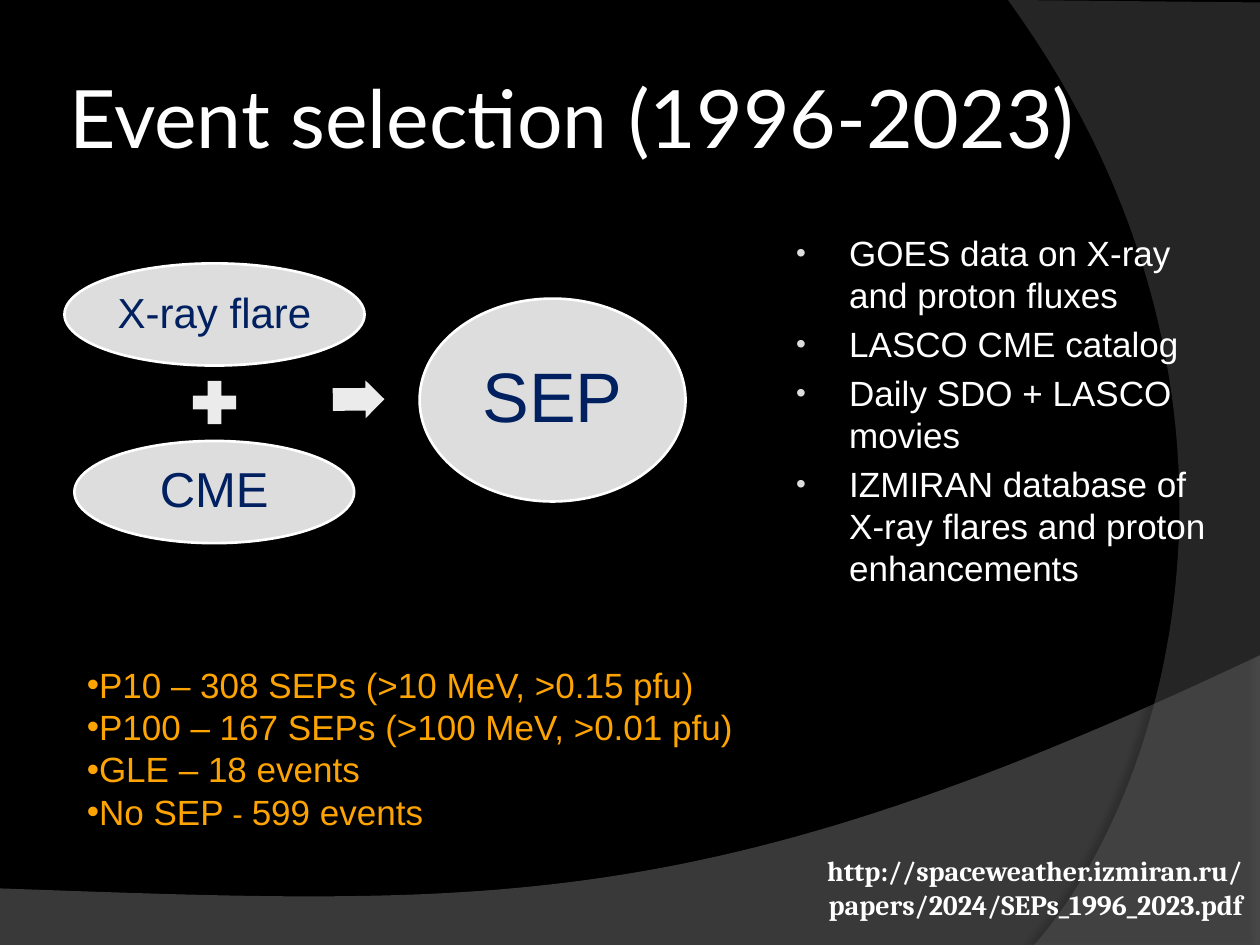
"""Build the event selection slide."""
from lxml.etree import SubElement
from pptx import Presentation
from pptx.dml.color import RGBColor as RGB
from pptx.enum.shapes import MSO_SHAPE as SHAPE
from pptx.enum.text import MSO_ANCHOR as ANCHOR, PP_ALIGN as ALIGN
from pptx.oxml.ns import qn
from pptx.util import Cm, Pt

COLORS = {"black": "000000", "white": "FFFFFF", "wave": "7F7F7F", "arc": "5E5E5E",
          "oval": "DDDDDD", "sign": "EBEBEB", "navy": "002060", "orange": "FDA403"}


def add_run(p, text, size, color, font="Arial", bold=False):
    r = p.add_run()
    r.text = text
    r.font.size, r.font.name, r.font.bold = Pt(size), font, bold
    r.font.color.rgb = RGB.from_string(COLORS[color])


def add_bullet(p, left=0, hanging=0, color=None, percent=100):
    pPr = p._p.get_or_add_pPr()
    pPr.set("marL", str(Cm(left)))
    pPr.set("indent", str(-Cm(hanging)))
    if color:
        clr = SubElement(pPr, qn("a:buClr"))
        SubElement(clr, qn("a:srgbClr"), val=COLORS[color])
    SubElement(pPr, qn("a:buSzPct"), val=str(percent * 1000))
    SubElement(pPr, qn("a:buFont"), typeface="Arial")
    SubElement(pPr, qn("a:buChar"), char="•")


prs = Presentation()
prs.slide_width, prs.slide_height = Cm(25.4), Cm(19.05)
s = prs.slides.add_slide(prs.slide_layouts[6])
s.background.fill.solid()
s.background.fill.fore_color.rgb = RGB.from_string(COLORS["black"])

swooshes = [
    ("wave", 45, [(0, 17.91), (0, 19.05), (25.4, 19.05)],
     [(25.4, 13.21), (14.2, 18.52), (9.93, 18.26), (0, 17.91)], (35, 3.5, 270)),
    ("arc", 40, [(25.4, 0.05), (25.4, 19.05)],
     [(20.85, 19.05), (23.75, 15.72), (25.86, 7.62), (20.32, 0)], (45, 4, 180)),
]
for color, alpha, corners, curve, (shade, dist, angle) in swooshes:
    points = list(corners)
    for step in range(61):
        t = step / 60
        weights = ((1 - t) ** 3, 3 * t * (1 - t) ** 2, 3 * t * t * (1 - t), t ** 3)
        points.append([sum(w * c[axis] for w, c in zip(weights, curve)) for axis in (0, 1)])
    points = [(Cm(x), Cm(y)) for x, y in points]
    fb = s.shapes.build_freeform(*points[0])
    fb.add_line_segments(points[1:])
    sp = fb.convert_to_shape()
    sp.fill.solid()
    sp.fill.fore_color.rgb = RGB.from_string(COLORS[color])
    sp.line.fill.background()
    fill_clr = sp._element.spPr.find(qn("a:solidFill"))[0]
    SubElement(fill_clr, qn("a:alpha"), val=str(alpha * 1000))
    effects = SubElement(sp._element.spPr, qn("a:effectLst"))
    shadow = SubElement(effects, qn("a:outerShdw"), blurRad=str(Pt(4)), dist=str(Pt(dist)),
                        dir=str(angle * 60000), algn="ctr", rotWithShape="0")
    clr = SubElement(shadow, qn("a:srgbClr"), val=COLORS["black"])
    SubElement(clr, qn("a:alpha"), val=str(shade * 1000))

title = s.shapes.add_textbox(Cm(1.27), Cm(0.76), Cm(20.75), Cm(3.18))
tf = title.text_frame
tf.word_wrap, tf.vertical_anchor = True, ANCHOR.MIDDLE
tf.margin_left = tf.margin_right = Cm(0.13)
add_run(tf.paragraphs[0], "Event selection (1996-2023)", 46, "white", "Lato")

diagram = [
    (SHAPE.OVAL, 1.3, 5.31, 6.05, 2.06, "X-ray flare", 24),
    (SHAPE.MATH_PLUS, 3.73, 7.52, 1.19, 1.19, "", 0),
    (SHAPE.OVAL, 1.5, 8.89, 5.64, 2.06, "CME", 28),
    (SHAPE.RIGHT_ARROW, 6.71, 7.67, 1.04, 0.76, "", 0),
    (SHAPE.OVAL, 8.46, 6.02, 5.36, 4.09, "SEP", 40),
]
for kind, x, y, w, h, text, size in diagram:
    sp = s.shapes.add_shape(kind, Cm(x), Cm(y), Cm(w), Cm(h))
    sp.shadow.inherit = False
    sp.fill.solid()
    sp.fill.fore_color.rgb = RGB.from_string(COLORS["oval" if text else "sign"])
    if kind == SHAPE.RIGHT_ARROW:
        sp.adjustments[0] = 0.6
        sp.rotation = 359.6
    if not text:
        sp.line.fill.background()
        continue
    sp.line.color.rgb = RGB.from_string(COLORS["white"])
    sp.line.width = Pt(1.5)
    tf = sp.text_frame
    tf.vertical_anchor = ANCHOR.MIDDLE
    tf.margin_left = tf.margin_right = tf.margin_top = tf.margin_bottom = Cm(0.08)
    p = tf.paragraphs[0]
    p.alignment, p.line_spacing = ALIGN.CENTER, 0.9
    add_run(p, text, size, "navy")

sources = ["GOES data on X-ray and proton fluxes", "LASCO CME catalog",
           "Daily SDO + LASCO movies",
           "IZMIRAN database of X-ray flares and proton enhancements"]
tf = s.shapes.add_textbox(Cm(15.7), Cm(4.55), Cm(8.99), Cm(12.57)).text_frame
tf.word_wrap = True
for i, text in enumerate(sources):
    p = tf.add_paragraph() if i else tf.paragraphs[0]
    p.space_before = Pt(4)
    add_bullet(p, 1.17, 1.07, "oval", 80)
    add_run(p, text, 20, "white")

counts = [[("P10 – 308 SEPs (>10 MeV, >0.15 pfu)", 20)],
          [("P100 – 167 SEPs (>100 MeV, >0.01 pfu)", 20)],
          [("GLE – 18 events", 20)],
          [("No SEP", 20), (" - ", 18), ("599 events", 20)]]
tf = s.shapes.add_textbox(Cm(1.5), Cm(13.26), Cm(15.6), Cm(3.68)).text_frame
tf.word_wrap = True
for i, runs in enumerate(counts):
    p = tf.add_paragraph() if i else tf.paragraphs[0]
    add_bullet(p)
    for text, size in runs:
        add_run(p, text, size, "orange")

tf = s.shapes.add_textbox(Cm(14.4), Cm(17.09), Cm(10.9), Cm(1.63)).text_frame
tf.word_wrap = True
p = tf.paragraphs[0]
p.alignment = ALIGN.RIGHT
add_run(p, "http://spaceweather.izmiran.ru/papers/2024/SEPs_1996_2023.pdf", 16, "white",
        "Cambria", True)

prs.save("out.pptx")
